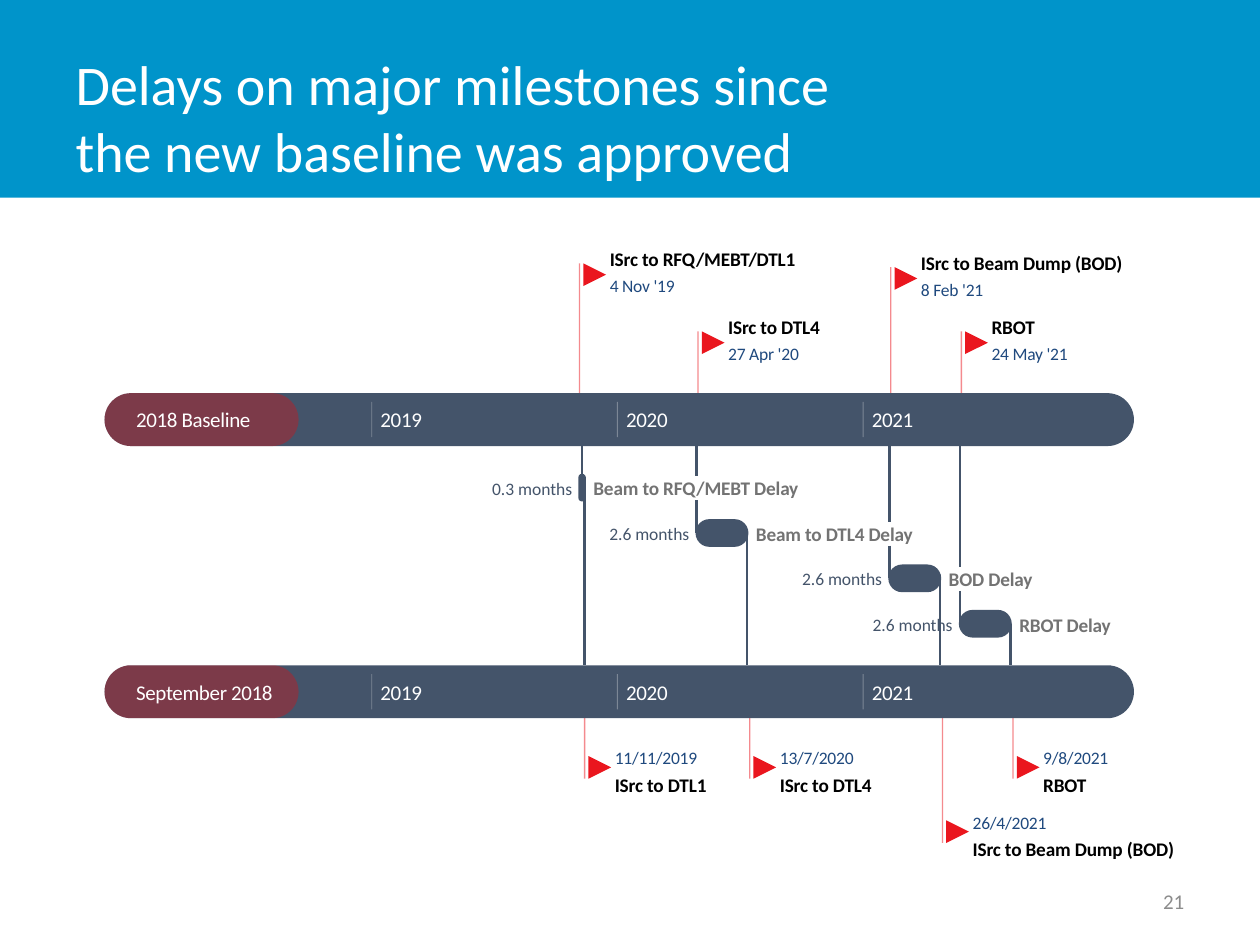
"""Build a slide comparing baseline and delayed milestones on two timelines."""
from lxml import etree
from pptx import Presentation
from pptx import util as u
from pptx.dml import color as dml
from pptx.enum import shapes, text
from pptx.oxml import ns

COLORS = {"header": "0094CA", "white": "FFFFFF", "slate": "44546A", "red": "EA161E",
          "cap": "FF0000", "black": "000000", "date": "1F497E", "delay": "737373",
          "number": "8C8C8C"}
FONT = "Calibri"

deck = Presentation()
deck.slide_width, deck.slide_height = u.Inches(10), u.Inches(7.5)
page = deck.slides.add_slide(deck.slide_layouts[5])


def add_text(words, left, top, width, height, size=10, color="black", bold=False,
             align=text.PP_ALIGN.LEFT, spacing=-10):
    box = page.shapes.add_textbox(*map(u.Inches, (left, top, width, height)))
    frame = box.text_frame
    frame.word_wrap = True
    frame.vertical_anchor = text.MSO_ANCHOR.MIDDLE
    frame.margin_left = frame.margin_right = frame.margin_top = frame.margin_bottom = 0
    para = frame.paragraphs[0]
    para.alignment = align
    span = para.add_run()
    span.text = words
    span.font.name, span.font.size, span.font.bold = FONT, u.Pt(size), bold
    span.font.color.rgb = dml.RGBColor.from_string(COLORS[color])
    span._r.get_or_add_rPr().set("spc", str(spacing))


def add_vertical(x, top, bottom, color="slate", weight=1.5, opacity=100):
    line = page.shapes.add_connector(shapes.MSO_CONNECTOR.STRAIGHT,
                                     *map(u.Inches, (x, top, x, bottom)))
    line.line.width = u.Pt(weight)
    line.line.color.rgb = dml.RGBColor.from_string(COLORS[color])
    if opacity < 100:
        tint = line._element.spPr.find(".//" + ns.qn("a:srgbClr"))
        etree.SubElement(tint, ns.qn("a:alpha")).set("val", str(opacity * 1000))
    etree.SubElement(line._element.spPr, ns.qn("a:effectLst"))


title = page.shapes.title
title.left, title.top, title.width, title.height = map(u.Inches, (0.5, 0.3, 6.81, 1.25))
title.text_frame.text = "Delays on major milestones since the new baseline was approved"
title.text_frame.auto_size = text.MSO_AUTO_SIZE.NONE
title.text_frame.vertical_anchor = text.MSO_ANCHOR.MIDDLE
para = title.text_frame.paragraphs[0]
para.alignment = text.PP_ALIGN.LEFT
para.font.name, para.font.size = FONT, u.Pt(32)
para.font.color.rgb = dml.RGBColor.from_string(COLORS["white"])

BAR_HEIGHT = 0.42
ROW_STEP = 0.36
bars = [("2018 Baseline", 3.12), ("September 2018", 5.28)]
upper_bottom, lower_top = bars[0][1] + BAR_HEIGHT, bars[1][1]
lower_bottom = lower_top + BAR_HEIGHT

baseline_milestones = [("ISrc to RFQ/MEBT/DTL1", "4 Nov '19", 4.6, 2.09),
                       ("ISrc to DTL4", "27 Apr '20", 5.54, 2.63),
                       ("ISrc to Beam Dump (BOD)", "8 Feb '21", 7.07, 2.12),
                       ("RBOT", "24 May '21", 7.63, 2.63)]
current_milestones = [("ISrc to DTL1", "11/11/2019", 4.64, 6.18),
                      ("ISrc to DTL4", "13/7/2020", 5.95, 6.18),
                      ("ISrc to Beam Dump (BOD)", "26/4/2021", 7.48, 6.69),
                      ("RBOT", "9/8/2021", 8.04, 6.18)]
delays = [("Beam to RFQ/MEBT Delay", "0.3 months", 4.59, 0.06, 4.62, 4.64),
          ("Beam to DTL4 Delay", "2.6 months", 5.52, 0.42, 5.53, 5.93),
          ("BOD Delay", "2.6 months", 7.05, 0.42, 7.06, 7.46),
          ("RBOT Delay", "2.6 months", 7.61, 0.42, 7.62, 8.02)]

RECT = shapes.MSO_SHAPE.RECTANGLE
PILL = shapes.MSO_SHAPE.ROUNDED_RECTANGLE
FLAG = shapes.MSO_SHAPE.FLOWCHART_MERGE
blocks = [(RECT, (0, 0, 10, 1.57), "header")]
for label, top in bars:
    blocks.append((PILL, (0.83, top, 8.17, BAR_HEIGHT), "slate"))
    blocks.append((PILL, (0.83, top, 1.54, BAR_HEIGHT), "cap"))

for row, (name, months, left, width, enter, leave) in enumerate(delays):
    top = 3.76 + ROW_STEP * row
    middle = top + 0.11
    above = top - ROW_STEP
    stops = [upper_bottom, above + 0.02, above + 0.21, middle] if row else [upper_bottom, middle]
    for start, end in zip(stops[::2], stops[1::2]):
        add_vertical(enter, start, end)
    add_vertical(leave, middle, lower_top)
    blocks.append((PILL, (left, top, width, 0.22), "slate"))

for name, date, x, tip in baseline_milestones:
    add_vertical(x, tip, bars[0][1], "red", 0.75, 50)
    blocks.append((FLAG, (x + 0.03, tip, 0.18, 0.18), "red"))
for name, date, x, tip in current_milestones:
    add_vertical(x, lower_bottom, tip, "red", 0.75, 50)
    blocks.append((FLAG, (x + 0.03, tip - 0.18, 0.18, 0.18), "red"))

for kind, area, color in blocks:
    block = page.shapes.add_shape(kind, *map(u.Inches, area))
    block.shadow.inherit = False
    block.line.fill.background()
    block.fill.solid()
    block.fill.fore_color.rgb = dml.RGBColor.from_string(COLORS[color])
    if kind == PILL:
        block.adjustments[0] = 0.5
    elif kind == FLAG:
        block.rotation = 270
    else:
        title._element.addprevious(block._element)
    if color == "cap":
        tint = block._element.spPr.find(".//" + ns.qn("a:srgbClr"))
        etree.SubElement(tint, ns.qn("a:alpha")).set("val", "30000")

for label, top in bars:
    add_text(label, 1.08, top + 0.11, 1.25, 0.2, size=12, color="white", spacing=-20)
    for step, year in enumerate(("2019", "2020", "2021")):
        x = 2.95 + 1.95 * step
        add_vertical(x, top + 0.07, top + 0.35, "white", 0.5, 30)
        add_text(year, x + 0.07, top + 0.11, 0.5, 0.2, size=12, color="white", spacing=-20)

for milestones, name_shift, date_shift in ((baseline_milestones, -0.13, 0.09),
                                           (current_milestones, -0.05, -0.25)):
    for name, date, x, tip in milestones:
        add_text(name, x + 0.24, tip + name_shift, 1.8, 0.19, size=11, bold=True)
        add_text(date, x + 0.24, tip + date_shift, 0.8, 0.17, color="date")

for row, (name, months, left, width, enter, leave) in enumerate(delays):
    top = 3.76 + ROW_STEP * row
    add_text(months, left - 0.85, top + 0.03, 0.8, 0.17, color="slate",
             align=text.PP_ALIGN.RIGHT, spacing=0)
    add_text(name, left + width + 0.06, top + 0.02, 1.8, 0.19,
             size=11, color="delay", bold=True)

add_text("21", 7.27, 6.95, 2.13, 0.4, size=12, color="number",
         align=text.PP_ALIGN.RIGHT, spacing=0)

deck.save("out.pptx")
